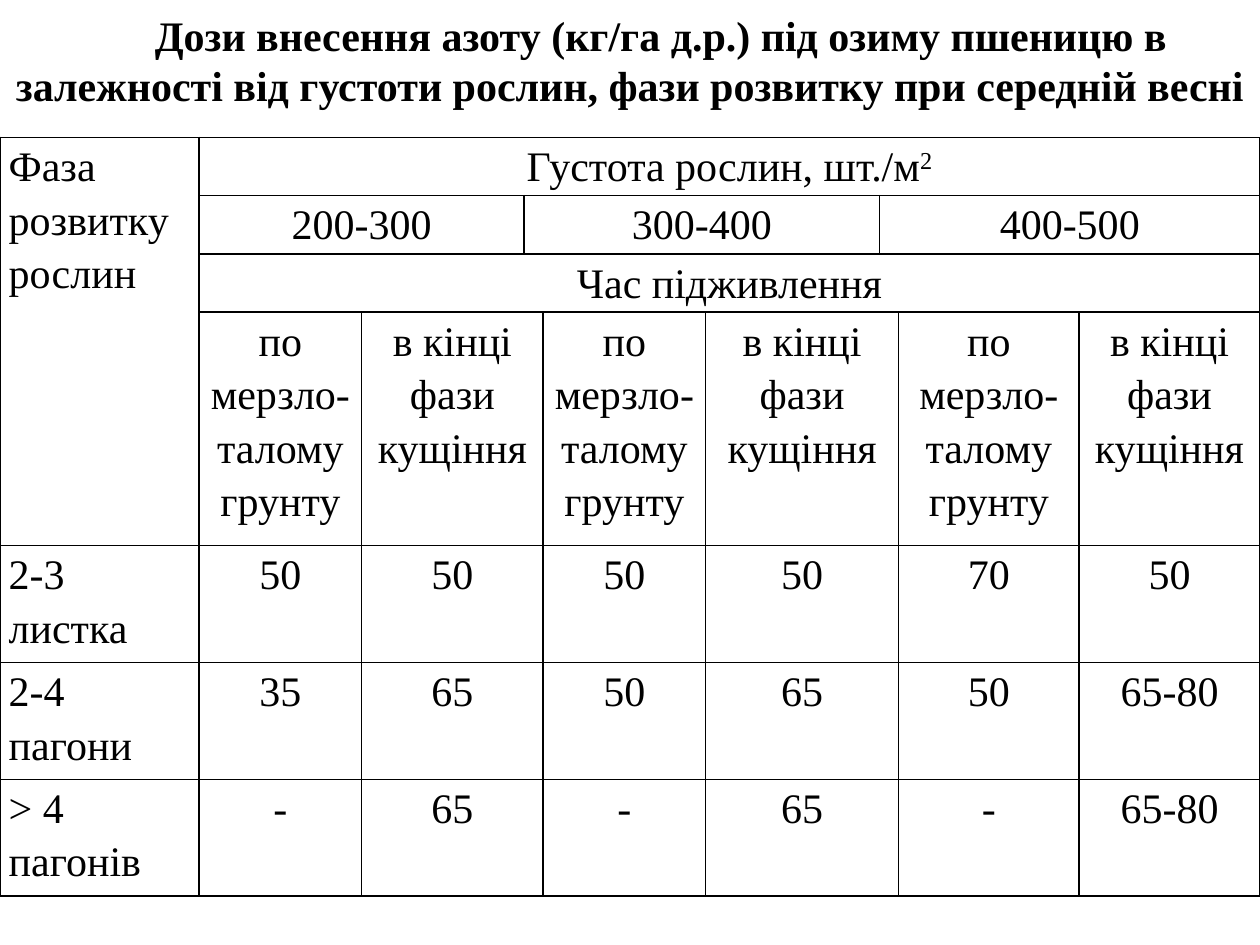
"""Build a slide with a table of nitrogen doses for winter wheat."""
from lxml import etree
from pptx import Presentation
from pptx import util as u
from pptx.dml.color import RGBColor
from pptx.enum import text
from pptx.oxml import ns

BLACK = RGBColor(0x00, 0x00, 0x00)
LEFT, CENTER, JUSTIFY = text.PP_ALIGN.LEFT, text.PP_ALIGN.CENTER, text.PP_ALIGN.JUSTIFY

TITLE = ("Дози внесення азоту (кг/га д.р.) під озиму пшеницю в залежності "
         "від густоти рослин, фази розвитку при середній весні")
COLUMN_WIDTHS = [113.8, 92.9, 92.9, 10.8, 92.9, 99.4, 10.8, 103.25, 103.25]
ROW_HEIGHTS = [33.3] * 3 + [133.4] + [66.8] * 3
DENSITIES = [("200-300", 1, 2), ("300-400", 3, 3), ("400-500", 6, 3)]
DOSE_COLUMNS = [(1, 1), (2, 2), (4, 1), (5, 2), (7, 1), (8, 1)]
TIMINGS = ["по мерзло-талому грунту", "в кінці фази кущіння"] * 3
DOSES = [
    ("2-3 листка", JUSTIFY, ["50", "50", "50", "50", "70", "50"]),
    ("2-4 пагони", JUSTIFY, ["35", "65", "50", "65", "50", "65-80"]),
    ("> 4 пагонів", LEFT, ["-", "65", "-", "65", "-", "65-80"]),
]


def write(paragraph, content, size=24, bold=False, align=CENTER, superscript=False):
    """Add a formatted run to a paragraph."""
    paragraph.alignment = align
    run = paragraph.add_run()
    run.text = content
    run.font.name = "Times New Roman"
    run.font.size = u.Pt(size)
    run.font.bold = bold
    run.font.color.rgb = BLACK
    if superscript:
        run.font._element.set("baseline", "30000")


class SlideBuilder:
    """Hold the slide and its style, and add each kind of element."""

    def __init__(self, slide, inset=5, line_width=1, line_spacing=1.15):
        self.slide = slide
        self.inset = u.Pt(inset)
        self.line_width = u.Pt(line_width)
        self.line_spacing = line_spacing

    def title(self, content, left, top, width, height, indent):
        """Add the bold heading with a first-line indent."""
        box = self.slide.shapes.add_textbox(*map(u.Pt, (left, top, width, height)))
        frame = box.text_frame
        frame.word_wrap = True
        frame.auto_size = text.MSO_AUTO_SIZE.SHAPE_TO_FIT_TEXT
        frame.vertical_anchor = text.MSO_ANCHOR.MIDDLE
        paragraph = frame.paragraphs[0]
        write(paragraph, content, bold=True)
        paragraph._p.get_or_add_pPr().set("indent", str(u.Pt(indent)))

    def table(self, left, top, widths, heights):
        """Add an unfilled table with a black grid."""
        frame = self.slide.shapes.add_table(
            len(heights), len(widths),
            *map(u.Pt, (left, top, sum(widths), sum(heights))))
        table = frame.table
        table.first_row = table.horz_banding = False
        for column, width in zip(table.columns, widths):
            column.width = u.Pt(width)
        for row, height in zip(table.rows, heights):
            row.height = u.Pt(height)
        for cell in table.iter_cells():
            self.border(cell)
            cell.fill.background()
        return table

    def border(self, cell):
        """Draw a line on all four sides of a cell."""
        properties = cell._tc.get_or_add_tcPr()
        for side in ("lnL", "lnR", "lnT", "lnB"):
            line = etree.SubElement(properties, ns.qn(f"a:{side}"), w=str(self.line_width))
            fill = etree.SubElement(line, ns.qn("a:solidFill"))
            etree.SubElement(fill, ns.qn("a:srgbClr"), val=str(BLACK))

    def cell(self, table, row, column, content, rows=1, columns=1, align=CENTER):
        """Fill a cell, merged over its span, and return its paragraph."""
        cell = table.cell(row, column)
        if rows > 1 or columns > 1:
            cell.merge(table.cell(row + rows - 1, column + columns - 1))
        cell.margin_left = cell.margin_right = self.inset
        cell.margin_top = cell.margin_bottom = 0
        paragraph = cell.text_frame.paragraphs[0]
        paragraph.line_spacing = self.line_spacing
        write(paragraph, content, align=align)
        return paragraph


def main():
    presentation = Presentation()
    presentation.slide_width, presentation.slide_height = u.Pt(720), u.Pt(540)
    builder = SlideBuilder(presentation.slides.add_slide(presentation.slide_layouts[6]))

    table = builder.table(0, 78.5, COLUMN_WIDTHS, ROW_HEIGHTS)
    builder.cell(table, 0, 0, "Фаза розвитку рослин", rows=4, align=JUSTIFY)
    density = builder.cell(table, 0, 1, "Густота рослин, шт./м", columns=8)
    write(density, "2", superscript=True)
    for label, column, span in DENSITIES:
        builder.cell(table, 1, column, label, columns=span)
    builder.cell(table, 2, 1, "Час підживлення", columns=8)
    for (column, span), timing in zip(DOSE_COLUMNS, TIMINGS):
        builder.cell(table, 3, column, timing, columns=span)
    for row, (phase, align, doses) in enumerate(DOSES, start=4):
        builder.cell(table, row, 0, phase, align=align)
        for (column, span), dose in zip(DOSE_COLUMNS, doses):
            builder.cell(table, row, column, dose, columns=span)

    builder.title(TITLE, 0, 1.5, 720, 65.5, indent=35.3)
    presentation.save("out.pptx")


if __name__ == "__main__":
    main()
